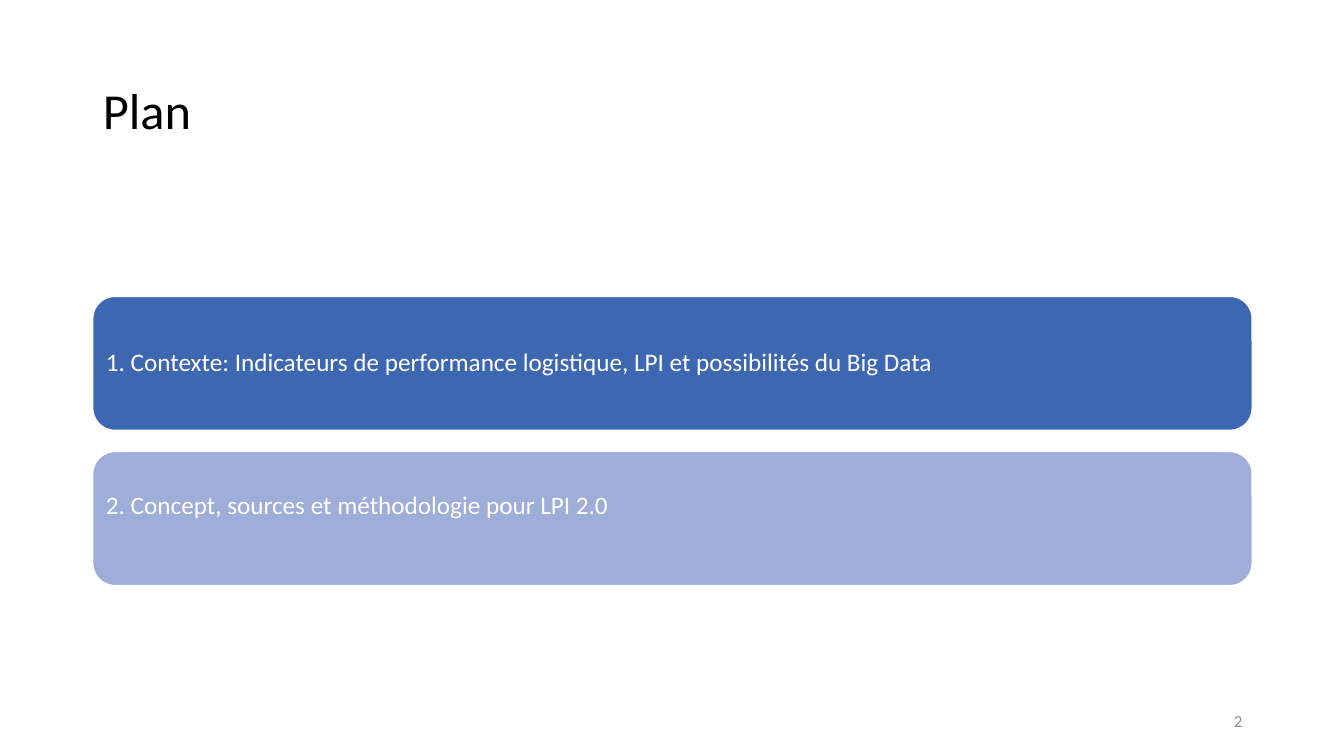
from pptx import Presentation
from pptx.dml.color import RGBColor
from pptx.enum.shapes import MSO_SHAPE
from pptx.enum.text import MSO_ANCHOR, MSO_AUTO_SIZE, PP_ALIGN
from pptx.util import Pt

ROUNDED = MSO_SHAPE.ROUNDED_RECTANGLE
MIDDLE = MSO_ANCHOR.MIDDLE
NO_FIT = MSO_AUTO_SIZE.NONE
LEFT, RIGHT = PP_ALIGN.LEFT, PP_ALIGN.RIGHT

BLACK = RGBColor(0x00, 0x00, 0x00)
WHITE = RGBColor(0xFF, 0xFF, 0xFF)
GREY = RGBColor(0x8C, 0x8C, 0x8C)
BLUE = RGBColor(0x3E, 0x67, 0xB2)
PALE_BLUE = RGBColor(0x9F, 0xAE, 0xD8)

EMU_PER_PX = 9144  # 100 px to the inch
TITLE_ONLY = 5


def px(n):
    return n * EMU_PER_PX


class SlideBuilder:
    font = "Calibri"

    def __init__(self, prs):
        self.slide = prs.slides.add_slide(prs.slide_layouts[TITLE_ONLY])

    def set_text(self, sp, text, size, color, para=None, frame=None):
        tf = sp.text_frame
        settings = {"word_wrap": True, "auto_size": NO_FIT,
                    "vertical_anchor": MIDDLE, **(frame or {})}
        for name, value in settings.items():
            setattr(tf, name, value)
        p = tf.paragraphs[0]
        for name, value in {"alignment": LEFT, **(para or {})}.items():
            setattr(p, name, value)
        r = p.add_run()
        r.text = text
        for name, value in {"name": self.font, "size": Pt(size)}.items():
            setattr(r.font, name, value)
        r.font.color.rgb = color

    def title(self, text, left, top, width, height):
        sp = self.slide.shapes.title
        box = {"left": left, "top": top, "width": width, "height": height}
        for name, value in box.items():
            setattr(sp, name, px(value))
        self.set_text(sp, text, 36, BLACK, {"line_spacing": 0.9})

    def text(self, text, left, top, width, height, size, color, para=None, frame=None):
        sp = self.slide.shapes.add_textbox(px(left), px(top), px(width), px(height))
        self.set_text(sp, text, size, color, para, frame)

    def bar(self, left, top, width, height, fill):
        sp = self.slide.shapes.add_shape(ROUNDED, px(left), px(top), px(width), px(height))
        sp.shadow.inherit = False
        sp.fill.solid()
        sp.fill.fore_color.rgb = fill
        sp.line.color.rgb = WHITE
        sp.line.width = Pt(1)

    def section(self, text, left, top, width, height, fill, bottom):
        self.bar(left, top, width, height, fill)
        inset = 6
        margins = {"margin_left": px(7), "margin_right": px(7),
                   "margin_top": px(7), "margin_bottom": px(bottom)}
        self.text(text, left + inset, top + inset, width - 2 * inset, height - 2 * inset,
                  18, WHITE, {"line_spacing": 0.9}, margins)


def main():
    prs = Presentation()
    prs.slide_width, prs.slide_height = px(1333), px(750)
    s = SlideBuilder(prs)

    # Title
    s.title("Plan", 92, 40, 1150, 145)

    # Sections: label, fill and bottom margin
    sections = [
        ("1. Contexte: Indicateurs de performance logistique, LPI et possibilités du Big Data",
         BLUE, 7),
        ("2. Concept, sources et méthodologie pour LPI 2.0", PALE_BLUE, 31),
    ]
    for i, (label, fill, bottom) in enumerate(sections):
        s.section(label, 92, 294 + 154 * i, 1150, 133, fill, bottom)

    # Slide number
    s.text("2", 942, 695, 300, 40, 12, GREY, {"alignment": RIGHT})

    prs.save("out.pptx")


if __name__ == "__main__":
    main()
